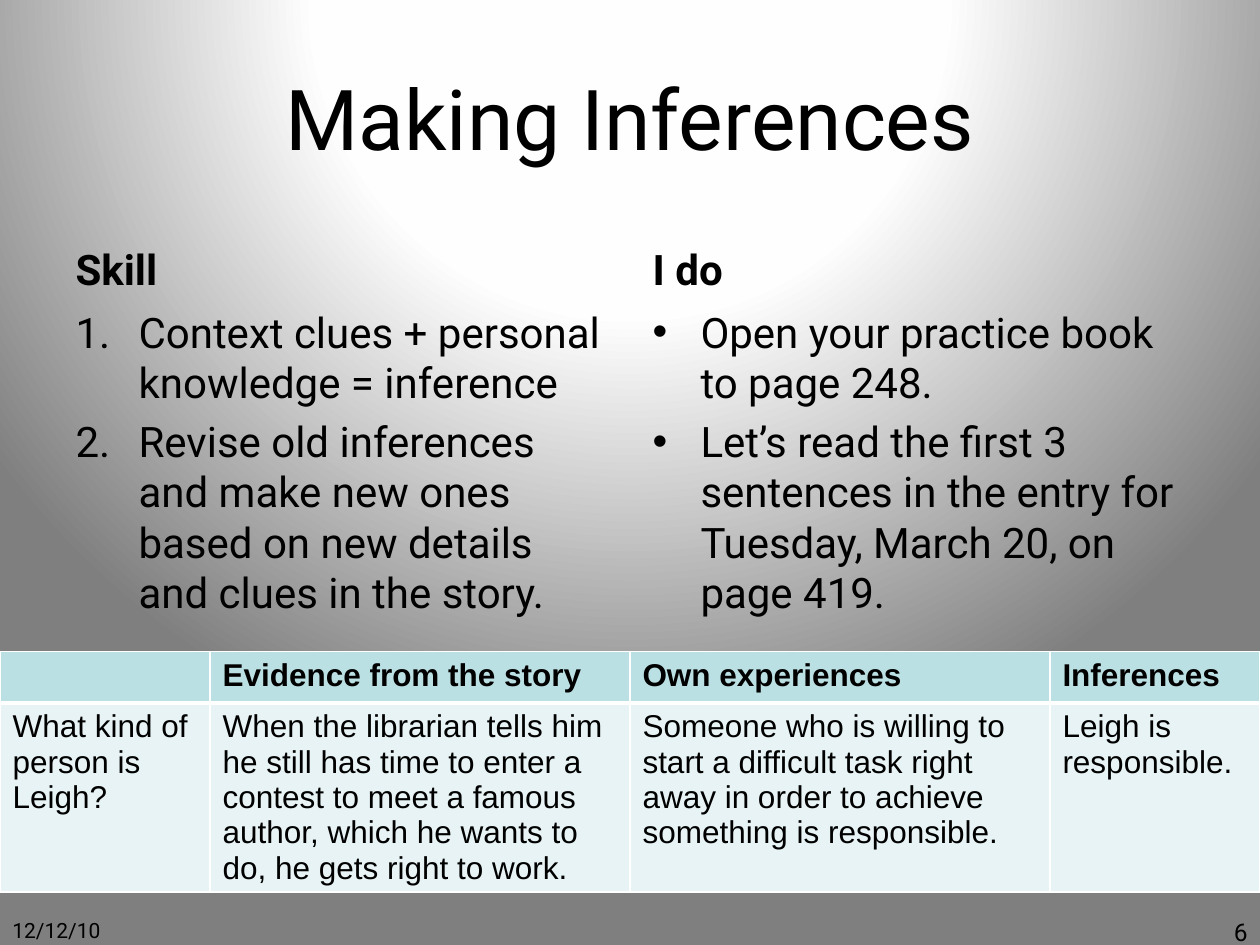
from dataclasses import dataclass

from lxml.etree import SubElement
from pptx import Presentation
from pptx.dml.color import RGBColor as RGB
from pptx.enum.text import MSO_ANCHOR as Anchor, MSO_AUTO_SIZE as Fit, PP_ALIGN as Align
from pptx.oxml import parse_xml
from pptx.oxml.ns import nsdecls, qn
from pptx.util import Inches, Pt

WIDE, HIGH = Inches(10), Inches(7.5)


@dataclass(frozen=True)
class Theme:
    font: str = "Roboto"
    grid: str = "Arial"
    ink: str = "000000"
    rule: str = "FFFFFF"
    head: str = "BBE0E3"
    cell: str = "E7F3F4"
    glow: tuple = ((0, "FFFFFF"), (40, "FEFEFE"), (100, "7F7F7F"))
    title: int = 48
    body: int = 24
    table: int = 18
    date: int = 12
    page: int = 14


LOOK = Theme()

LISTS = (
    ("Skill", 2.87, 0.5, ("buAutoNum", {"type": "arabicPeriod"}), (
        "Context clues + personal knowledge = inference",
        "Revise old inferences and make new ones based on new details and clues in the story.")),
    ("I do", 3.2, 0.38, ("buChar", {"char": "•"}), (
        "Open your practice book to page 248.",
        "Let’s read the first 3 sentences in the entry for Tuesday, March 20, on page 419.")),
)

ROWS = (
    ("", "Evidence from the story", "Own experiences", "Inferences"),
    ("What kind of person is Leigh?",
     "When the librarian tells him he still has time to enter a contest to meet a famous "
     "author, which he wants to do, he gets right to work.",
     "Someone who is willing to start a difficult task right away in order to achieve "
     "something is responsible.",
     "Leigh is responsible."),
)


def apply(item, **values):
    for name, value in values.items():
        setattr(item, name, value)


def place(shape, left, top, width, height):
    apply(shape, left=Inches(left), top=Inches(top),
          width=Inches(width), height=Inches(height))


def write(frame, lines, size, font=LOOK.font, bold=False, align=Align.LEFT):
    """Fill a text frame, one paragraph per line."""
    frame.text = "\n".join(lines)
    apply(frame, word_wrap=True, auto_size=Fit.NONE)
    for para in frame.paragraphs:
        para.alignment = align
        for run in para.runs:
            apply(run.font, name=font, size=Pt(size), bold=bold)
            run.font.color.rgb = RGB.from_string(LOOK.ink)


def mark(para, indent, bullet):
    """Give a paragraph a hanging indent and a bullet or number."""
    props = para._p.get_or_add_pPr()
    props.set("marL", str(Inches(indent)))
    props.set("indent", str(-Inches(indent)))
    tag, values = bullet
    SubElement(props, qn("a:buFont"), typeface=LOOK.grid)
    SubElement(props, qn(f"a:{tag}"), values)


def paint(slide):
    """Light the background from above with a round gradient."""
    stops = "".join(f'<a:gs pos="{pos * 1000}"><a:srgbClr val="{tint}"/></a:gs>'
                    for pos, tint in LOOK.glow)
    fill = parse_xml(
        f'<a:gradFill {nsdecls("a")} rotWithShape="1"><a:gsLst>{stops}</a:gsLst>'
        '<a:path path="circle"><a:fillToRect l="50000" t="-80000" r="50000" b="180000"/>'
        '</a:path></a:gradFill>')
    slide.background.fill.solid()
    old = slide._element.find(".//" + qn("p:bgPr")).find(qn("a:solidFill"))
    old.getparent().replace(old, fill)


def add_list(slide, col, head, height, indent, bullet, items):
    """Fill one column: its heading and the list below it."""
    holders = slide.placeholders
    left = 0.5 + col * 4.58
    label, body = holders[1 + 2 * col], holders[2 + 2 * col]
    place(label, left, 1.68, 4.42, 0.7)
    write(label.text_frame, [head], LOOK.body, bold=True)
    label.text_frame.vertical_anchor = Anchor.BOTTOM
    place(body, left, 2.38, 4.42, height)
    write(body.text_frame, items, LOOK.body)
    for para in body.text_frame.paragraphs:
        mark(para, indent, bullet)


def edge(cell, **widths):
    """Draw cell borders; call before the cell is filled."""
    props = cell._tc.get_or_add_tcPr()
    for side, width in widths.items():
        line = SubElement(props, qn(f"a:ln{side}"), w=str(Pt(width)))
        SubElement(SubElement(line, qn("a:solidFill")), qn("a:srgbClr"), val=LOOK.rule)


def add_grid(slide):
    shape = slide.shapes.add_table(len(ROWS), len(ROWS[0]), 0, Inches(5.17), WIDE, Inches(1.91))
    table = shape.table
    for col, share in zip(table.columns, (1, 2, 2, 1)):
        col.width = WIDE * share // 6
    for row, height in zip(table.rows, (0.41, 1.5)):
        row.height = Inches(height)
    for r, texts in enumerate(ROWS):
        top = r == 0
        for c, text in enumerate(texts):
            cell = table.cell(r, c)
            write(cell.text_frame, [text], LOOK.table, LOOK.grid, bold=top)
            edge(cell, L=1, R=1, T=1 if top else 3, B=3 if top else 1)
            cell.fill.solid()
            cell.fill.fore_color.rgb = RGB.from_string(LOOK.head if top else LOOK.cell)


def add_note(slide, left, text, size, align):
    box = slide.shapes.add_textbox(0, 0, 0, 0)
    place(box, left, 7.23, 2.33, 0.27)
    write(box.text_frame, [text], size, align=align)


def main():
    deck = Presentation()
    apply(deck, slide_width=WIDE, slide_height=HIGH)
    slide = deck.slides.add_slide(deck.slide_layouts.get_by_name("Comparison"))
    paint(slide)
    title = slide.shapes.title
    place(title, 0.5, 0.3, 9, 1.25)
    write(title.text_frame, ["Making Inferences"], LOOK.title, align=Align.CENTER)
    for col, parts in enumerate(LISTS):
        add_list(slide, col, *parts)
    add_note(slide, 0, "12/12/10", LOOK.date, Align.LEFT)
    add_note(slide, 7.67, "6", LOOK.page, Align.RIGHT)
    add_grid(slide)
    deck.save("out.pptx")


if __name__ == "__main__":
    main()
